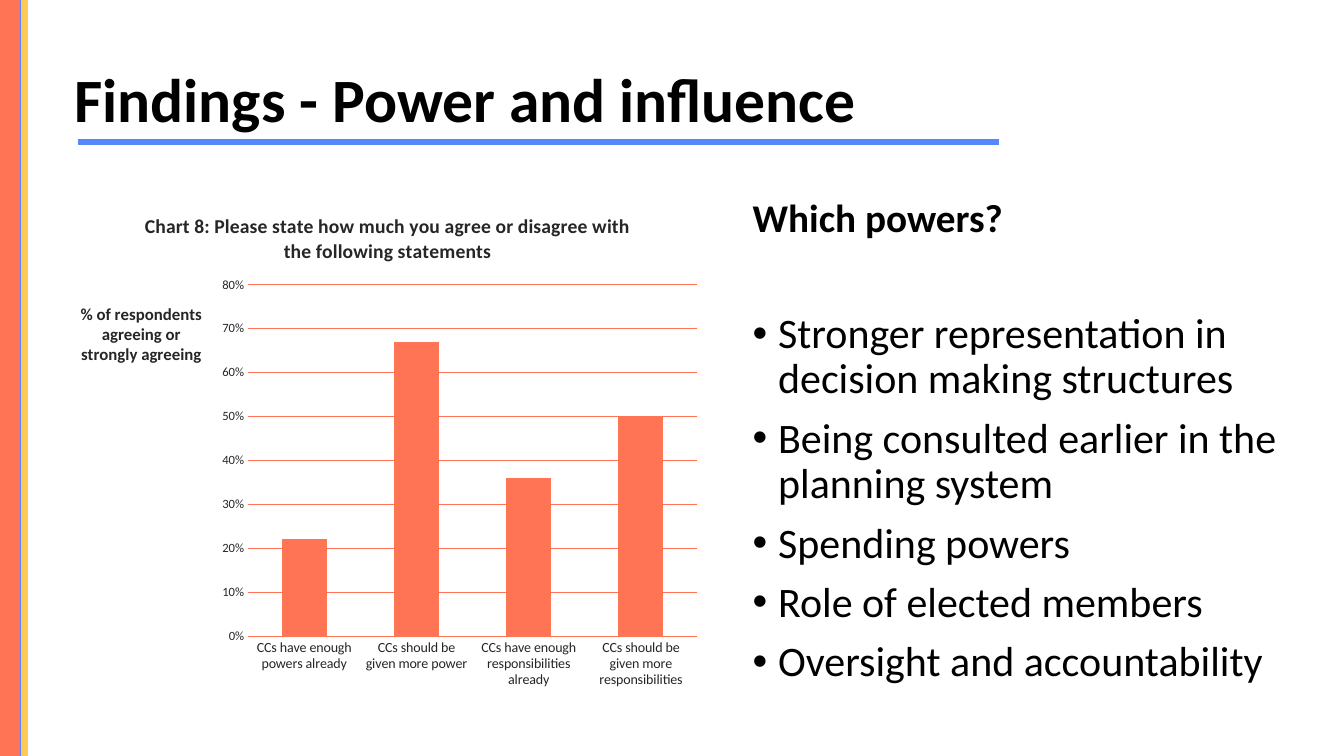
from lxml.etree import SubElement
from pptx import Presentation
from pptx.chart.data import CategoryChartData
from pptx.dml.color import RGBColor
from pptx.enum.chart import XL_CHART_TYPE, XL_TICK_MARK
from pptx.enum.shapes import MSO_SHAPE
from pptx.enum.text import MSO_ANCHOR
from pptx.oxml.ns import qn
from pptx.util import Cm, Pt

FONT = "Calibri"
CORAL, BLUE, YELLOW = "FF7455", "5588FF", "FFC955"
BLACK, CHARCOAL = "000000", "262626"
POWERS = [
    "Stronger representation in decision making structures",
    "Being consulted earlier in the planning system",
    "Spending powers",
    "Role of elected members",
    "Oversight and accountability",
]
AGREEMENT = {
    "CCs have enough powers already": 0.22,
    "CCs should be given more power": 0.67,
    "CCs have enough responsibilities already": 0.36,
    "CCs should be given more responsibilities": 0.5,
}


def color(hex_code):
    """Turn a hex string into a colour."""
    return RGBColor.from_string(hex_code)


def style_font(font, size, hex_code, bold=False):
    """Set the face, size, colour and weight of a font."""
    font.name, font.size, font.bold = FONT, Pt(size), bold
    font.color.rgb = color(hex_code)


def add_bar(slide, left, top, width, height, hex_code):
    """Draw a plain filled bar."""
    bar = slide.shapes.add_shape(
        MSO_SHAPE.RECTANGLE, Cm(left), Cm(top), Cm(width), Cm(height))
    bar.shadow.inherit = False
    bar.fill.solid()
    bar.fill.fore_color.rgb = color(hex_code)
    bar.line.color.rgb = color(hex_code)
    bar.line.width = Pt(1)


def add_text_frame(slide, left, top, width, height, anchor):
    """Add a wrapping text box and return its frame."""
    frame = slide.shapes.add_textbox(
        Cm(left), Cm(top), Cm(width), Cm(height)).text_frame
    frame.word_wrap = True
    frame.vertical_anchor = anchor
    return frame


def write(paragraph, wording, size, bold=False):
    """Write one run into a paragraph."""
    paragraph.line_spacing = 0.9
    run = paragraph.add_run()
    run.text = wording
    style_font(run.font, size, BLACK, bold)


def add_bullet(frame, wording, gap):
    """Append a bulleted paragraph with a gap in points above it."""
    paragraph = frame.add_paragraph()
    paragraph.space_before = Pt(gap)
    properties = paragraph._p.get_or_add_pPr()
    properties.set("marL", str(Cm(0.64)))
    properties.set("indent", str(-Cm(0.64)))
    SubElement(properties, qn("a:buFont"), typeface="Arial")
    SubElement(properties, qn("a:buChar"), char="•")
    write(paragraph, wording, 30)


def place(element, index, **fractions):
    """Give a chart part a manual layout in fractions of the chart."""
    for former in element.findall(qn("c:layout")):
        element.remove(former)
    layout = SubElement(element, qn("c:layout"))
    element.insert(index, layout)
    manual = SubElement(layout, qn("c:manualLayout"))
    if "w" in fractions:
        SubElement(manual, qn("c:layoutTarget"), val="inner")
    for side in "xy":
        SubElement(manual, qn(f"c:{side}Mode"), val="edge")
    for key, fraction in fractions.items():
        SubElement(manual, qn(f"c:{key}"), val=str(fraction))


def write_chart_title(frame, wording, size):
    """Write a bold title inside the chart."""
    run = frame.paragraphs[0].add_run()
    run.text = wording
    style_font(run.font, size, CHARCOAL, True)


def style_axes(chart):
    """Format both axes, the gridlines and the value axis title."""
    statements, share = chart.category_axis, chart.value_axis
    for axis, size in ((statements, 10), (share, 9)):
        axis.major_tick_mark = axis.minor_tick_mark = XL_TICK_MARK.NONE
        style_font(axis.tick_labels.font, size, CHARCOAL)
    share.minimum_scale, share.maximum_scale, share.major_unit = 0, 0.8, 0.1
    share.tick_labels.number_format = "0%"
    share.tick_labels.number_format_is_linked = False
    share.format.line.fill.background()
    for line in (statements.format.line, share.major_gridlines.format.line):
        line.color.rgb = color(CORAL)
        line.width = Pt(0.75)
    caption = share.axis_title
    write_chart_title(caption.text_frame,
                      "% of respondents agreeing or strongly agreeing", 12)
    body = caption._element.find(".//" + qn("a:bodyPr"))
    body.set("rot", "0")
    body.set("vert", "horz")
    place(caption._element, 1, x=0.02, y=0.21)


def add_agreement_chart(slide):
    """Add the column chart of agreement with each statement."""
    chart_data = CategoryChartData(number_format="0%")
    chart_data.categories = AGREEMENT.keys()
    chart_data.add_series("Series 1", AGREEMENT.values())
    chart = slide.shapes.add_chart(
        XL_CHART_TYPE.COLUMN_STACKED,
        Cm(1.63), Cm(4.88), Cm(16.28), Cm(12.7), chart_data).chart
    style_font(chart.font, 10, BLACK)
    chart.has_legend = False
    write_chart_title(
        chart.chart_title.text_frame,
        "Chart 8: Please state how much you agree or disagree with "
        "the following statements", 14)
    chart.chart_title.include_in_layout = False
    plot = chart.plots[0]
    plot.gap_width, plot.overlap = 150, 100
    plot.vary_by_categories = False
    columns = plot.series[0].format.fill
    columns.solid()
    columns.fore_color.rgb = color(CORAL)
    style_axes(chart)
    plot_area = chart._chartSpace.find(".//" + qn("c:plotArea"))
    place(plot_area, 0, x=0.284, y=0.181, w=0.695, h=0.697)


def main():
    """Build and save the slide."""
    deck = Presentation()
    deck.slide_width, deck.slide_height = Cm(33.87), Cm(19.05)
    slide = deck.slides.add_slide(deck.slide_layouts[6])

    add_bar(slide, 1.98, 3.51, 23.19, 0.13, BLUE)
    for left, width, stripe in ((0.5, 0.1, BLUE), (0.56, 0.13, YELLOW),
                                (0, 0.5, CORAL)):
        add_bar(slide, left, 0, width, 19.05, stripe)

    heading = add_text_frame(slide, 1.63, 0.74, 29.21, 3.68, MSO_ANCHOR.MIDDLE)
    write(heading.paragraphs[0], "Findings - Power and influence", 44, True)

    powers = add_text_frame(slide, 18.72, 4.88, 15.14, 12.73, MSO_ANCHOR.TOP)
    write(powers.paragraphs[0], "Which powers?", 28, True)
    for position, power in enumerate(POWERS):
        add_bullet(powers, power, 10 if position else 51)

    add_agreement_chart(slide)
    deck.save("out.pptx")


if __name__ == "__main__":
    main()
